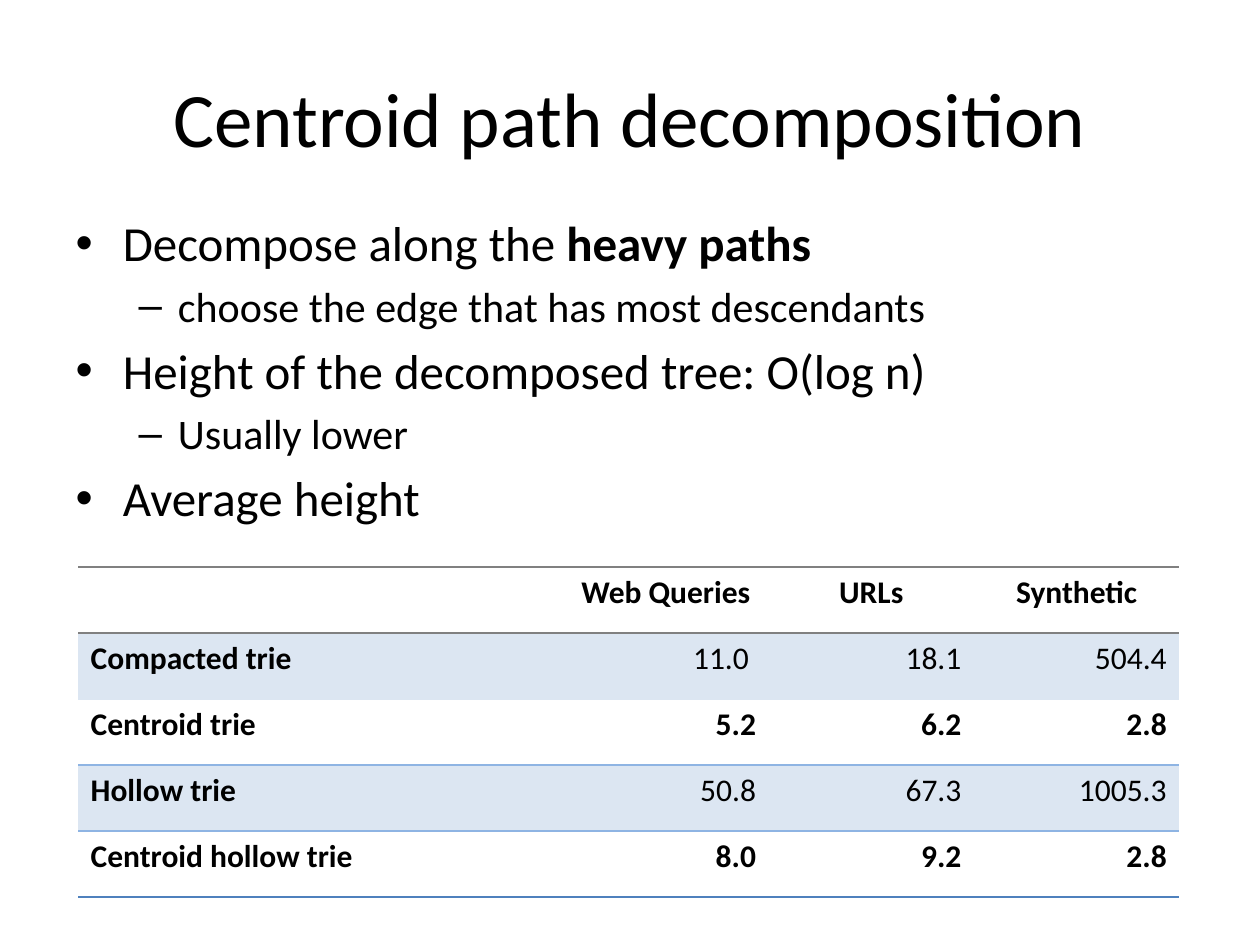
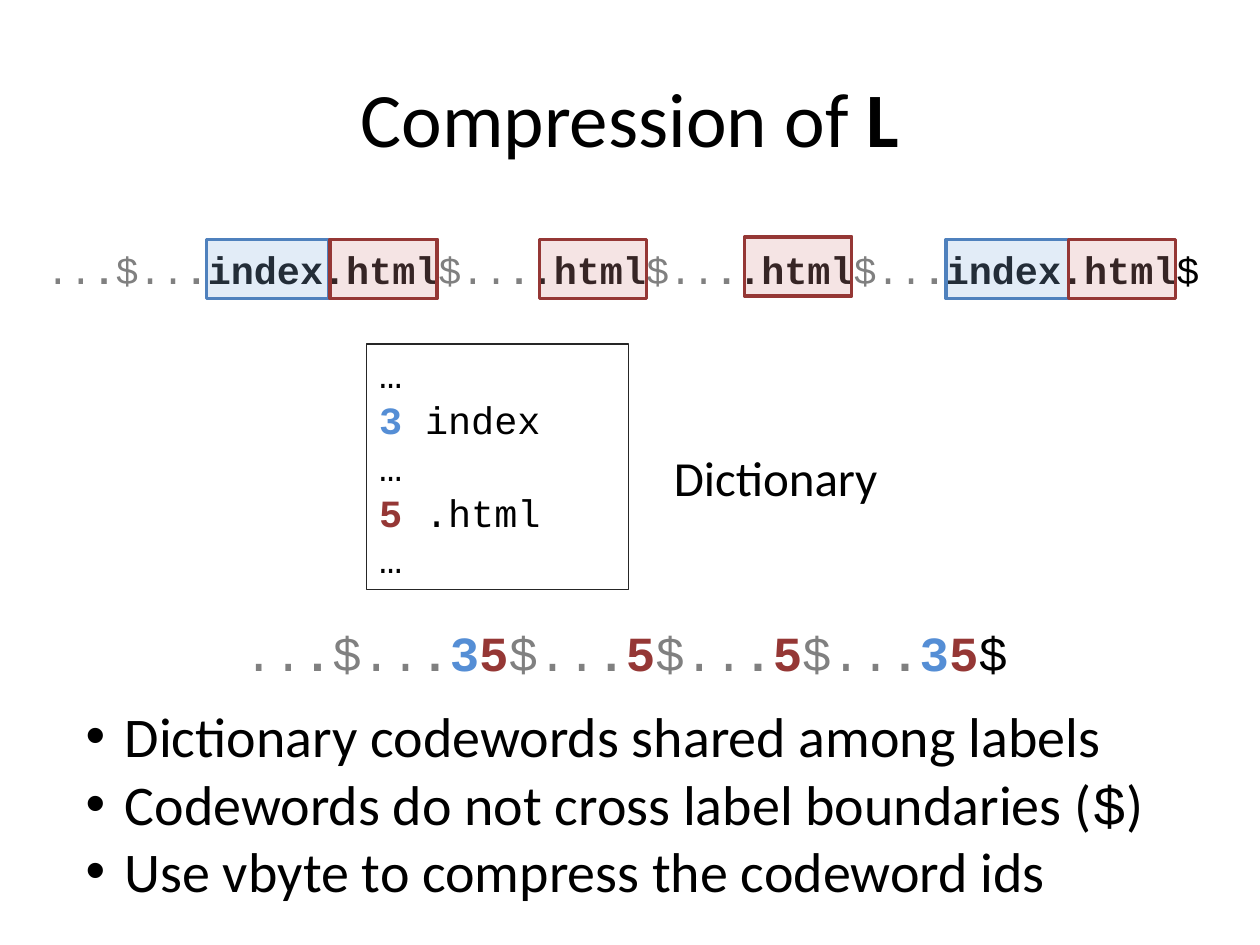
from lxml.etree import SubElement
from pptx import Presentation
from pptx.dml.color import RGBColor
from pptx.enum.shapes import MSO_SHAPE
from pptx.enum.text import MSO_ANCHOR, MSO_AUTO_SIZE, PP_ALIGN
from pptx.oxml import parse_xml
from pptx.oxml.ns import nsdecls, qn
from pptx.util import Inches, Pt

COLORS = {
    "text": "000000", "dim": "808080", "frame": "262626",
    "blue": "4F81BD", "sky": "8EB4E3", "blue_code": "558ED5",
    "red": "953735", "rose": "D99694", "band": "DCE6F2",
}
BODY_FONT, CODE_FONT = "Calibri", "Courier New"
NO_STYLE = "{2D5ABB26-0587-4C30-8999-92F81FD0307C}"

# Runs are (text, color, bold) with an optional font.
LABEL_END = [("$..", "dim", False), (".", "dim", True)]
LINE_START = [("..", "dim", False), (".", "dim", True)]
LINE_END = [("$", "text", False)]


def rgb(name):
    return RGBColor.from_string(COLORS[name])


def plain(text, bold=False):
    return (text, "text", bold)


def add_runs(p, runs, size, font=BODY_FONT):
    for text, color, bold, *own_font in runs:
        r = p.add_run()
        r.text = text
        r.font.size = Pt(size)
        r.font.name = own_font[0] if own_font else font
        r.font.bold = bold
        r.font.color.rgb = rgb(color)


def paragraphs(tf, count):
    return [tf.paragraphs[0]] + [tf.add_paragraph() for _ in range(count - 1)]


def place(shape, left, top, width, height):
    shape.left, shape.top = Inches(left), Inches(top)
    shape.width, shape.height = Inches(width), Inches(height)


def add_slide(prs, title_runs):
    s = prs.slides.add_slide(prs.slide_layouts[1])
    title = s.shapes.title
    place(title, 0.5, 0.3, 9, 1.25)
    title.text_frame.vertical_anchor = MSO_ANCHOR.MIDDLE
    p = title.text_frame.paragraphs[0]
    p.alignment = PP_ALIGN.CENTER
    add_runs(p, title_runs, 44)
    return s


def fill_list(s, box, items, sizes, indent=None):
    """Fill the body placeholder with (level, runs) items; sizes go by level."""
    body = s.placeholders[1]
    place(body, *box)
    tf = body.text_frame
    tf.auto_size = MSO_AUTO_SIZE.NONE
    for p, (level, runs) in zip(paragraphs(tf, len(items)), items):
        p.level = level
        add_runs(p, runs, sizes[level])
        if indent:
            p.space_before = Pt(0)
            pPr = p._p.get_or_add_pPr()
            pPr.set("marL", str(Inches(indent)))
            pPr.set("indent", str(-Inches(indent)))


def add_text(s, box, runs, size, font=BODY_FONT):
    tf = s.shapes.add_textbox(*map(Inches, box)).text_frame
    tf.word_wrap = False
    add_runs(tf.paragraphs[0], runs, size, font)


def add_rect(s, box, line, width, fill=None):
    sp = s.shapes.add_shape(MSO_SHAPE.RECTANGLE, *map(Inches, box))
    sp.shadow.inherit = False
    sp.line.color.rgb = rgb(line)
    sp.line.width = Pt(width)
    if fill:
        sp.fill.solid()
        sp.fill.fore_color.rgb = rgb(fill)
        color = sp._element.spPr.find(qn("a:solidFill"))[0]
        SubElement(color, qn("a:alpha")).set("val", "25000")
    else:
        sp.fill.background()
    return sp


def border_xml(side, color, width):
    return parse_xml(
        f'<a:{side} {nsdecls("a")} w="{Pt(width)}"><a:solidFill>'
        f'<a:srgbClr val="{COLORS[color]}"/></a:solidFill></a:{side}>')


def add_table(s, box, col_widths, rows, rules):
    """rules holds the (color, width) of each horizontal line, top to bottom."""
    frame = s.shapes.add_table(len(rows), len(col_widths), *map(Inches, box))
    table = frame.table
    table._tbl.tblPr.find(qn("a:tableStyleId")).text = NO_STYLE
    for column, width in zip(table.columns, col_widths):
        column.width = Inches(width)
    for i, row in enumerate(rows):
        banded = i % 2 == 1
        for j, text in enumerate(row):
            cell = table.cell(i, j)
            tcPr = cell._tc.get_or_add_tcPr()
            tcPr.append(border_xml("lnT", *rules[i]))
            tcPr.append(border_xml("lnB", *rules[i + 1]))
            if banded:
                cell.fill.solid()
                cell.fill.fore_color.rgb = rgb("band")
            else:
                cell.fill.background()
            p = cell.text_frame.paragraphs[0]
            if j:
                p.alignment = PP_ALIGN.RIGHT if i else PP_ALIGN.CENTER
            if text:
                add_runs(p, [plain(text, j == 0 or not banded)], 18)


def centroid_slide(prs):
    s = add_slide(prs, [plain("Centroid path decomposition")])
    fill_list(s, (0.5, 1.64, 9, 4.95), [
        (0, [plain("Decompose along the "), plain("heavy paths", True)]),
        (1, [plain("choose the edge that has most descendants")]),
        (0, [plain("Height of the decomposed tree: O(log n)")]),
        (1, [plain("Usually lower")]),
        (0, [plain("Average height")]),
    ], sizes=(28, 24))
    heights = [
        ("", "Web Queries", "URLs", "Synthetic"),
        ("Compacted trie", "11.0 ", "18.1", "504.4"),
        ("Centroid trie", "5.2", "6.2", "2.8"),
        ("Hollow trie", "50.8", "67.3", "1005.3"),
        ("Centroid hollow trie", "8.0", "9.2", "2.8"),
    ]
    header_rule, row_rule = ("dim", 0.75), ("sky", 1.5)
    rules = [header_rule, header_rule, ("band", 0.25), row_rule, row_rule,
             ("blue", 1.5)]
    add_table(s, (0.62, 4.5, 8.75, 2.62), (3.85, 1.63, 1.63, 1.63),
              heights, rules)


def join_labels(labels):
    """Runs of one code line: dotted start, labels split by $, closing $."""
    runs = LINE_START + LABEL_END
    for i, label in enumerate(labels):
        runs = runs + (LABEL_END if i else []) + label
    return runs + LINE_END


def add_dictionary(s):
    box = add_rect(s, (2.91, 2.73, 2.08, 1.95), "frame", 0.75)
    tf = box.text_frame
    tf.word_wrap = True
    tf.vertical_anchor = MSO_ANCHOR.TOP
    more = [plain("…")]
    entries = [more, [("3", "blue_code", True), plain(" index")],
               more, [("5", "red", True), plain(" .html")], more]
    for p, runs in zip(paragraphs(tf, len(entries)), entries):
        p.alignment = PP_ALIGN.LEFT
        add_runs(p, runs, 22, CODE_FONT)
    add_text(s, (5.25, 3.5, 1.84, 0.57), [plain("Dictionary")], 28)


def compression_slide(prs):
    s = add_slide(prs, [plain("Compression of "), plain("L", True)])

    html, index_html = [plain(".html", True)], [plain("index.html", True)]
    add_text(s, (0.27, 1.9, 9.46, 0.47),
             join_labels([index_html, html, html, index_html]), 22, CODE_FONT)
    for left in (1.64, 7.51):
        add_rect(s, (left, 1.9, 0.97, 0.47), "blue", 2, "sky")
    for left, top in ((2.62, 1.9), (5.91, 1.88), (4.28, 1.9), (8.48, 1.9)):
        add_rect(s, (left, top, 0.85, 0.47), "red", 2, "rose")

    html_id = [("5", "red", True)]
    index_html_id = [("3", "blue_code", True)] + html_id
    add_text(s, (1.84, 4.89, 6.33, 0.57),
             join_labels([index_html_id, html_id, html_id, index_html_id]),
             28, CODE_FONT)

    add_dictionary(s)
    fill_list(s, (0.58, 5.52, 8.63, 1.72), [
        (0, [plain("Dictionary codewords shared among labels")]),
        (0, [plain("Codewords do not cross label boundaries ("),
             (*plain("$"), CODE_FONT), plain(")")]),
        (0, [plain("Use vbyte to compress the codeword ids")]),
    ], sizes=(32,), indent=0.31)


def main():
    prs = Presentation()
    prs.slide_width, prs.slide_height = Inches(10), Inches(7.5)
    centroid_slide(prs)
    compression_slide(prs)
    prs.save("out.pptx")


if __name__ == "__main__":
    main()
